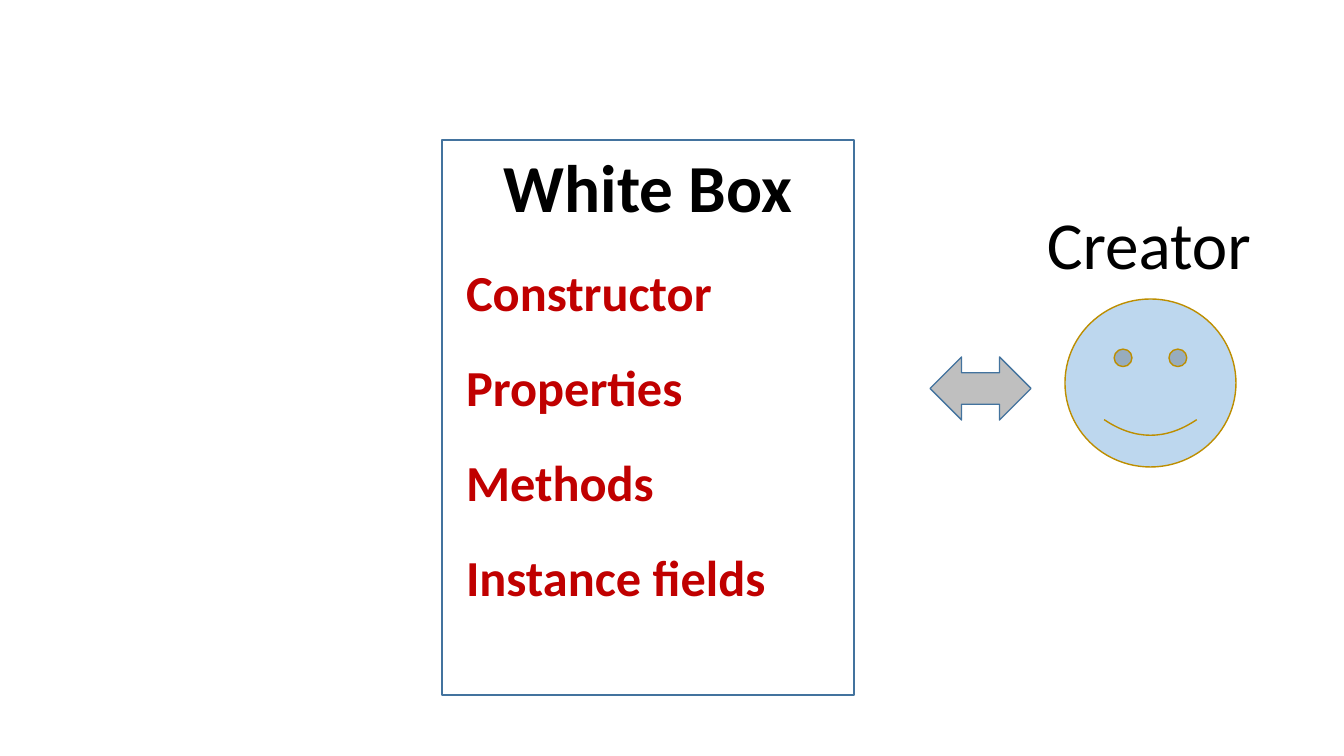
from lxml import etree
from pptx import Presentation
from pptx.dml.color import RGBColor
from pptx.enum.shapes import MSO_SHAPE
from pptx.enum.text import MSO_ANCHOR, MSO_AUTO_SIZE, PP_ALIGN
from pptx.oxml.ns import qn
from pptx.util import Emu, Pt

SMILEY = MSO_SHAPE.SMILEY_FACE
DOUBLE_ARROW = MSO_SHAPE.LEFT_RIGHT_ARROW
TOP = MSO_ANCHOR.TOP
NO_AUTOFIT = MSO_AUTO_SIZE.NONE
LEFT, CENTER = PP_ALIGN.LEFT, PP_ALIGN.CENTER

BLACK = RGBColor(0x00, 0x00, 0x00)
RED = RGBColor(0xC0, 0x00, 0x00)
BLUE_LINE = RGBColor(0x43, 0x73, 0x9E)
GOLD_LINE = RGBColor(0xBD, 0x8E, 0x00)
FACE_BLUE = RGBColor(0xBD, 0xD7, 0xEE)
ARROW_GRAY = RGBColor(0xBF, 0xBF, 0xBF)

EMU_PER_PX = 914400 / 100.8
MEMBERS = ["Constructor", "Properties", "Methods", "Instance fields"]


def box(*lengths):
    """Turn px lengths into EMU."""
    return [Emu(round(length * EMU_PER_PX)) for length in lengths]


def format_text(frame, size, color, bold, align):
    frame.auto_size = NO_AUTOFIT
    frame.vertical_anchor = TOP
    for paragraph in frame.paragraphs:
        paragraph.alignment = align
        for run in paragraph.runs:
            run.font.name = "Calibri"
            run.font.size = Pt(size)
            run.font.bold = bold
            run.font.color.rgb = color


prs = Presentation()
prs.slide_width, prs.slide_height = box(1344, 756)
slide = prs.slides.add_slide(prs.slide_layouts[1])

# White box with its heading
white_box = slide.shapes.title
white_box.left, white_box.top, white_box.width, white_box.height = box(442, 140, 412, 555)
white_box.line.color.rgb = BLUE_LINE
white_box.line.width = Pt(1)
white_box.text_frame.text = "White Box"
format_text(white_box.text_frame, 48, BLACK, True, CENTER)

# Class members inside the box
members = slide.placeholders[1]
members.left, members.top, members.width, members.height = box(456, 256, 384, 360)
members.text_frame.text = "\n".join(MEMBERS)
format_text(members.text_frame, 36, RED, True, LEFT)
for member in members.text_frame.paragraphs:
    member.space_before = Pt(0)
    member.space_after = Pt(24.7)
    properties = member._p.get_or_add_pPr()
    properties.set("marL", "0")
    properties.set("indent", "0")
    etree.SubElement(properties, qn("a:buNone"))

# Creator and the arrow towards the box
for preset, place, fill, line in [
    (SMILEY, (1065, 299, 171, 168), FACE_BLUE, GOLD_LINE),
    (DOUBLE_ARROW, (930, 357, 101, 63), ARROW_GRAY, BLUE_LINE),
]:
    symbol = slide.shapes.add_shape(preset, *box(*place))
    symbol.shadow.inherit = False
    symbol.fill.solid()
    symbol.fill.fore_color.rgb = fill
    symbol.line.color.rgb = line
    symbol.line.width = Pt(1)

creator = slide.shapes.add_textbox(*box(1037, 197, 227, 92))
creator.text_frame.text = "Creator"
format_text(creator.text_frame, 48, BLACK, False, LEFT)

prs.save("out.pptx")
